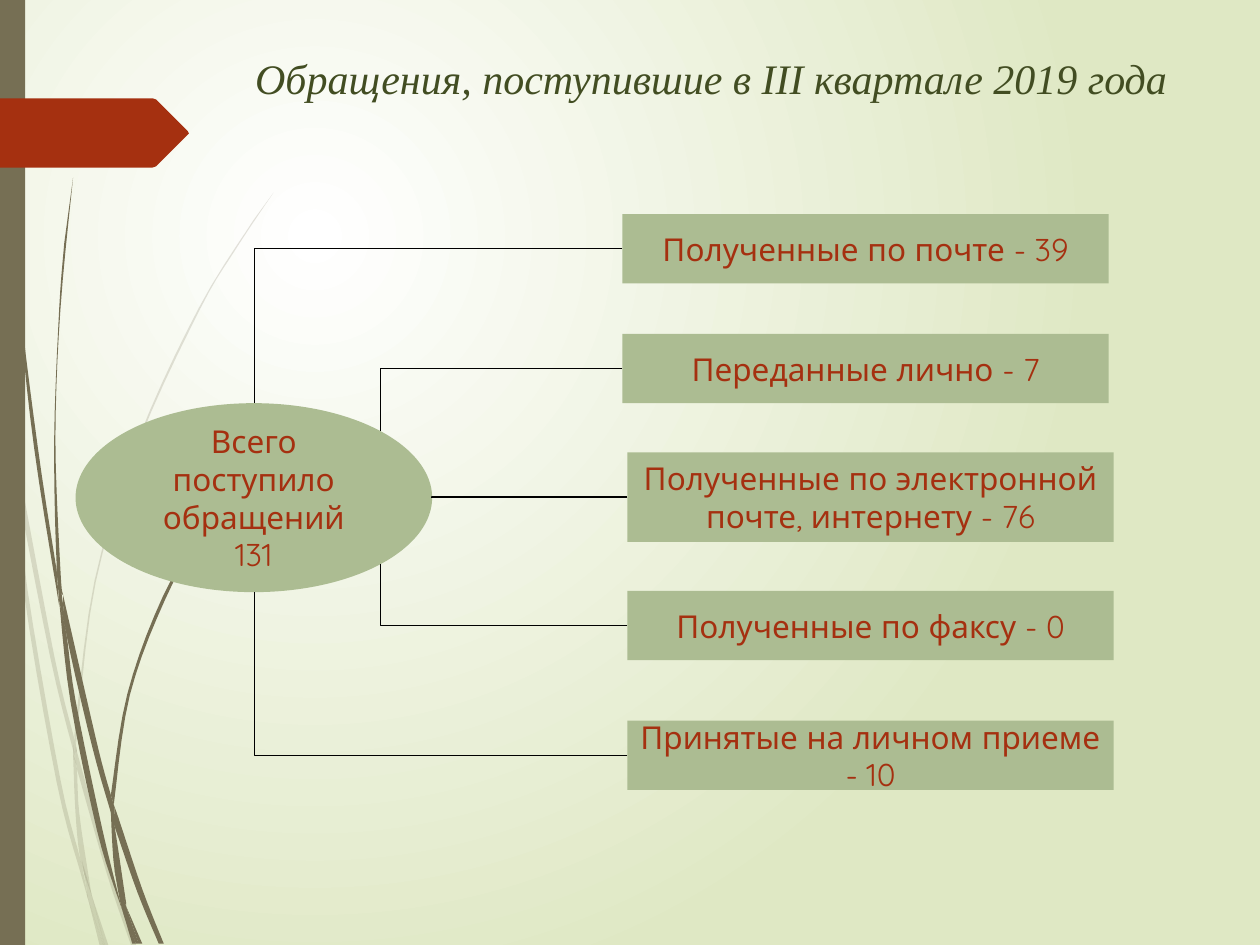
"""Build a slide that splits the quarter's appeals by the way they came in."""
from dataclasses import dataclass

from lxml.etree import SubElement
from pptx import Presentation
from pptx.dml.color import RGBColor
from pptx.enum.shapes import MSO_CONNECTOR, MSO_SHAPE
from pptx.enum.text import MSO_ANCHOR, PP_ALIGN
from pptx.oxml.ns import qn
from pptx.util import Inches, Pt

HUES = {"white": "FFFFFF", "pale": "DFE8C4", "bark": "766F54", "rust": "A53010",
        "sage": "ACBC92", "moss": "424D22", "black": "000000"}
FONT = "Quicksand"
HUB = (0.6, 3.2, 2.83, 1.5)


@dataclass
class Blade:
    """A grass blade given by its two edges."""
    front: list
    back: list


@dataclass
class Box:
    """A labelled box and the hub site it joins."""
    text: str
    left: float
    top: float
    high: float
    site: int
    end: tuple


FAINT = [
    Blade([(0.08, 3.5), (0.06, 3.22), (0, 2.82)], [(0, 2.99), (0.07, 3.44), (0.08, 3.5)]),
    Blade([(0.1, 3.45), (0.43, 5.2), (0.59, 5.86)],
          [(0.59, 5.99), (0.4, 5.22), (0.12, 3.76), (0.1, 3.45)]),
    Blade([(0.61, 5.96), (0.64, 6.07), (0.88, 6.92), (1.08, 7.5)],
          [(1.04, 7.5), (0.85, 6.94), (0.61, 6.1)]),
    Blade([(0.73, 7.11), (0.86, 7.5)], [(0.83, 7.5), (0.73, 7.11)]),
    Blade([(0.08, 3.5), (0.12, 3.76), (0.22, 4.69), (0.48, 6.19), (0.64, 6.83), (0.7, 7.14)],
          [(0.64, 6.93), (0.45, 6.21), (0.19, 4.7), (0.08, 3.5)]),
    Blade([(0.58, 5.99), (0.6, 6.46), (0.64, 6.83), (0.73, 7.11)],
          [(0.72, 7.06), (0.63, 6.46), (0.61, 6.1), (0.58, 5.99)]),
    Blade([(0.61, 5.96), (0.61, 5.84), (0.76, 4.62), (1.11, 3.49), (1.59, 2.45),
           (1.87, 1.98), (2.17, 1.53)],
          [(2.01, 1.75), (1.58, 2.44), (1.1, 3.48), (0.75, 4.61), (0.59, 5.84)]),
    Blade([(0.7, 7.14), (0.79, 7.5)], [(0.82, 7.5), (0.7, 7.14)]),
    Blade([(0.61, 6.1), (0.61, 5.96), (0.59, 5.86)], [(0.58, 5.99), (0.61, 6.08)]),
    Blade([(0.65, 6.83), (0.69, 7.07), (0.7, 7.14), (0.82, 7.5)],
          [(0.83, 7.5), (0.73, 7.11), (0.65, 6.83)]),
]
DARK = [
    Blade([(0.02, 0), (0.05, 1.1), (0.14, 2.33), (0.27, 3.55), (0.47, 4.81)],
          [(0.45, 4.53), (0.3, 3.55), (0.15, 2.32), (0.06, 1.09), (0.03, 0)]),
    Blade([(0.5, 4.72), (0.53, 5.05), (0.73, 5.92), (0.88, 6.45)],
          [(0.88, 6.31), (0.77, 5.9), (0.5, 4.72)]),
    Blade([(0.91, 6.41), (0.94, 6.49), (1.13, 7.06), (1.3, 7.49)],
          [(1.26, 7.49), (1.09, 7.08), (0.91, 6.56)]),
    Blade([(0.47, 4.77), (0.53, 5.05), (0.6, 5.56), (0.81, 6.57), (0.97, 7.22)],
          [(0.92, 7.08), (0.77, 6.59), (0.56, 5.57), (0.47, 4.77)]),
    Blade([(0.5, 4.72), (0.48, 4.53), (0.44, 3.49), (0.48, 2.45), (0.58, 1.41)],
          [(0.51, 1.93), (0.47, 2.45), (0.43, 3.49), (0.45, 4.49), (0.49, 4.72)]),
    Blade([(1, 7.19), (1.13, 7.49)], [(1.1, 7.49), (1, 7.19)]),
    Blade([(0.45, 4.49), (0.49, 4.72), (0.53, 5.05)], [(0.47, 4.77), (0.45, 4.53)]),
    Blade([(0.91, 6.41), (0.91, 6.33), (1.03, 5.52), (1.31, 4.76), (1.69, 4.06), (2.16, 3.44)],
          [(1.91, 3.73), (1.68, 4.05), (1.29, 4.74), (1.01, 5.51), (0.88, 6.31)]),
    Blade([(0.97, 7.22), (1.05, 7.49)], [(1.08, 7.49), (0.97, 7.22)]),
    Blade([(0.88, 6.45), (0.91, 6.91), (1, 7.19)], [(1, 7.16), (0.91, 6.56), (0.88, 6.45)]),
    Blade([(0.88, 6.45), (0.91, 6.56), (0.91, 6.41)], [(0.88, 6.31), (0.88, 6.45)]),
    Blade([(0.91, 6.91), (0.97, 7.22), (1.08, 7.49)], [(1.1, 7.49), (1, 7.19), (0.91, 6.91)]),
]
ARROW = [(1.5, 1.06), (1.24, 1.32), (1.21, 1.33), (0, 1.33),
         (0, 0.78), (1.21, 0.78), (1.24, 0.79), (1.49, 1.04)]
BOXES = [
    Box("Полученные по почте - 39", 4.94, 1.7, 0.55, 0, (2.02, 3.2)),
    Box("Переданные лично - 7", 4.94, 2.65, 0.55, 7, (3.02, 3.42)),
    Box("Полученные по электронной почте, интернету - 76", 4.98, 3.59, 0.71, 6, (3.43, 3.95)),
    Box("Полученные по факсу - 0", 4.98, 4.69, 0.55, 5, (3.02, 4.48)),
    Box("Принятые на личном приеме - 10", 4.98, 5.72, 0.55, 4, (2.02, 4.7)),
]


def tint(name: str) -> RGBColor:
    """Return a named colour."""
    return RGBColor.from_string(HUES[name])


def paint(shape, name: str) -> None:
    """Give a shape a flat fill with no line or shadow."""
    shape.shadow.inherit = False
    shape.fill.solid()
    shape.fill.fore_color.rgb = tint(name)
    shape.line.fill.background()


def bend(edge: list, steps: int = 5) -> list:
    """Run a smooth curve through the points of an edge."""
    knots = [edge[0], *edge, edge[-1]]
    curve = [edge[0]]
    for a, b, c, d in zip(knots, knots[1:], knots[2:], knots[3:]):
        for t in (n / steps for n in range(1, steps + 1)):
            curve.append(tuple(
                b[i] + t * (c[i] - a[i]) / 2
                + t ** 2 * (2 * a[i] - 5 * b[i] + 4 * c[i] - d[i]) / 2
                + t ** 3 * (3 * b[i] - a[i] - 3 * c[i] + d[i]) / 2 for i in (0, 1)))
    return curve


def trace(shapes, points: list, name: str):
    """Draw a closed outline."""
    spots = [(Inches(x), Inches(y)) for x, y in points]
    pen = shapes.build_freeform(*spots[0])
    pen.add_line_segments(spots[1:], close=True)
    shape = pen.convert_to_shape()
    paint(shape, name)
    return shape


def grow(shapes, blade: Blade, faint: bool) -> None:
    """Draw one grass blade."""
    shape = trace(shapes, bend(blade.front) + bend(blade.back), "bark")
    if faint:
        shade = shape.element.spPr.find(qn("a:solidFill"))[0]
        SubElement(shade, qn("a:alpha"), val="20000")


def write(frame, text: str, font: str, size: int, name: str, slant: bool = False) -> None:
    """Set centred text and its look."""
    frame.word_wrap = True
    frame.text = text
    for para in frame.paragraphs:
        para.alignment = PP_ALIGN.CENTER
        for run in para.runs:
            run.font.name, run.font.size = font, Pt(size)
            run.font.color.rgb, run.font.italic = tint(name), slant


def label(shapes, kind: MSO_SHAPE, spot: tuple, text: str):
    """Draw a sage shape with rust text."""
    shape = shapes.add_shape(kind, *map(Inches, spot))
    paint(shape, "sage")
    shape.text_frame.vertical_anchor = MSO_ANCHOR.MIDDLE
    write(shape.text_frame, text, FONT, 18, "rust")
    return shape


def join(shapes, box: Box, card, hub) -> None:
    """Link a box to its site on the hub."""
    mid = round(box.top + box.high / 2, 2)
    flat = mid == box.end[1]
    kind = MSO_CONNECTOR.STRAIGHT if flat else MSO_CONNECTOR.ELBOW
    link = shapes.add_connector(kind, *map(Inches, (box.left, mid, *box.end)))
    link.begin_connect(card, 1)
    ends = link.element.find(".//" + qn("p:cNvCxnSpPr"))
    SubElement(ends, qn("a:endCxn"), id=str(hub.shape_id), idx=str(box.site))
    if not flat:
        link.element.spPr.find(qn("a:prstGeom")).set("prst", "bentConnector2")
    link.line.color.rgb = tint("black")
    link.line.width = Pt(0.75)
    SubElement(link.element.spPr, qn("a:effectLst"))


def wash(slide) -> None:
    """Set the round background gradient."""
    fill = slide.background.fill
    fill.gradient()
    for stop, name in zip(fill.gradient_stops, ("white", "pale")):
        stop.color.rgb = tint(name)
    grad = slide.element.find(".//" + qn("a:gradFill"))
    grad.remove(grad.find(qn("a:lin")))
    ring = SubElement(grad, qn("a:path"), path="circle")
    SubElement(ring, qn("a:fillToRect"), l="50000", t="50000", r="100000", b="100000")


def main() -> None:
    """Build and save the slide."""
    deck = Presentation()
    deck.slide_width, deck.slide_height = Inches(10), Inches(7.5)
    slide = deck.slides.add_slide(deck.slide_layouts[6])
    shapes = slide.shapes
    wash(slide)
    for blade in FAINT:
        grow(shapes, blade, True)
    for blade in DARK:
        grow(shapes, blade, False)
    band = shapes.add_shape(MSO_SHAPE.RECTANGLE, 0, 0, Inches(0.2), Inches(7.5))
    paint(band, "bark")
    trace(shapes, ARROW, "rust")
    title = shapes.add_textbox(*map(Inches, (1.69, 0.37, 7.99, 1.4)))
    write(title.text_frame, "Обращения, поступившие в III квартале 2019 года ",
          "Times New Roman", 24, "moss", True)
    hub = label(shapes, MSO_SHAPE.OVAL, HUB, "Всего поступило обращений\n131")
    for box in BOXES:
        card = label(shapes, MSO_SHAPE.RECTANGLE, (box.left, box.top, 3.86, box.high), box.text)
        join(shapes, box, card, hub)
    deck.save("out.pptx")


if __name__ == "__main__":
    main()
